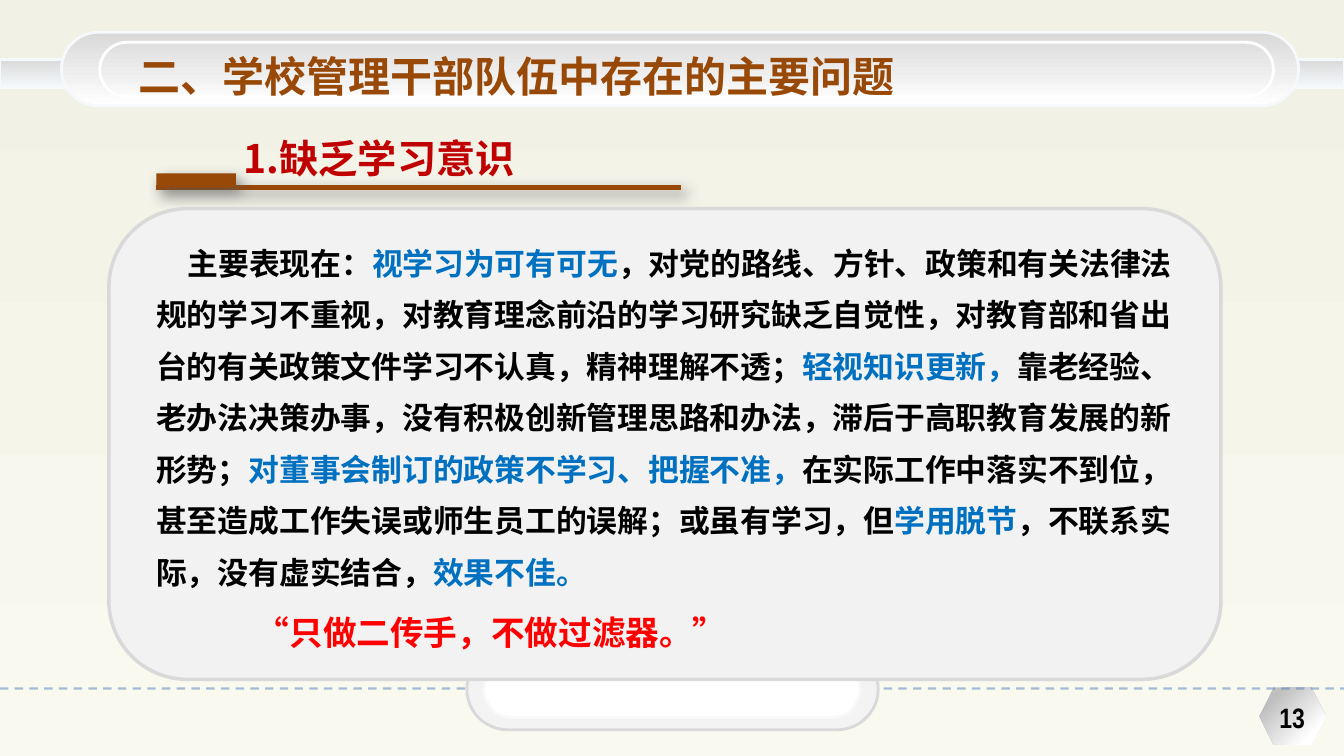
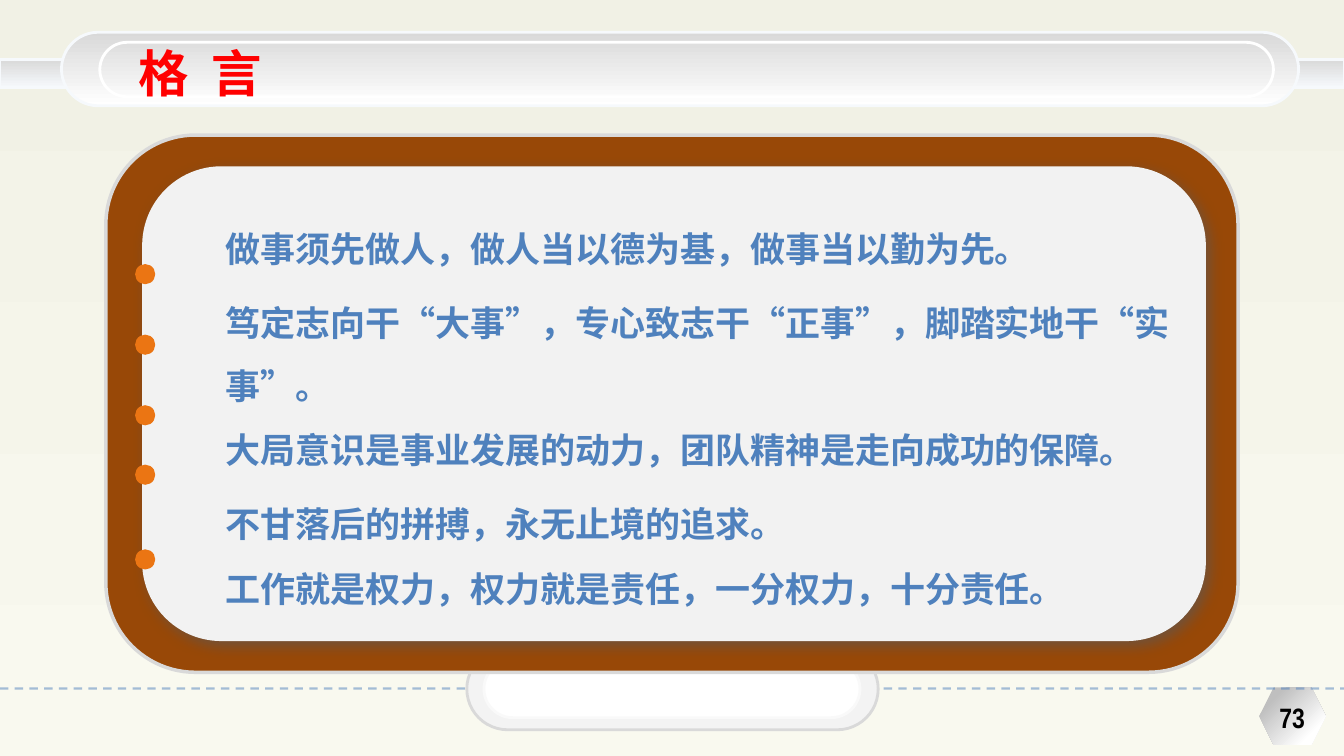
from dataclasses import dataclass

from lxml.etree import SubElement
from pptx import Presentation
from pptx.dml.color import RGBColor
from pptx.enum.dml import MSO_LINE
from pptx.enum.shapes import MSO_CONNECTOR, MSO_SHAPE
from pptx.enum.text import MSO_ANCHOR, MSO_AUTO_SIZE, PP_ALIGN
from pptx.oxml.ns import qn
from pptx.slide import Slide
from pptx.util import Inches, Pt

SANS = "Noto Sans CJK SC"
NARROW = "Arial Narrow"
BROWN, BLUE, BLACK, RED = "984807", "4F81BD", "000000", "FF0000"
SKY, PAPER, EDGE, PALE = "0070C0", "F2F2F2", "D9D9D9", "F6F9FC"
ROUND, RECT = MSO_SHAPE.ROUNDED_RECTANGLE, MSO_SHAPE.RECTANGLE


@dataclass(frozen=True)
class Blend:
    """A gradient of two colours, its angle counted anticlockwise."""
    start: str
    end: str
    angle: int = 270
    low: float = 0
    high: float = 1


@dataclass(frozen=True)
class Panel:
    """A preset shape with its place and look."""
    kind: MSO_SHAPE
    box: tuple[float, float, float, float]
    fill: str | Blend | None = None
    line: str | None = None
    width: float = 2
    bend: float | None = None
    shadow: bool = False


@dataclass(frozen=True)
class Style:
    """The look of a run of text."""
    size: float
    color: str
    face: str = SANS
    track: int = 0


@dataclass(frozen=True)
class Maxim:
    """A saying with its line pitch and the gap above, in points."""
    text: str
    pitch: float = 45
    gap: float = 7.5


FRAME = (
    Panel(MSO_SHAPE.HEXAGON, (12.49, 6.82, 0.66, 0.57),
          Blend("BFBFBF", "FFFFFF", 315, 0.2, 0.8)),
    Panel(RECT, (0, 0.59, 13.33, 0.28), Blend(EDGE, PALE), PALE),
    Panel(ROUND, (0.61, 0.32, 12.27, 0.73), Blend(EDGE, "FFFFFF"), PALE, bend=0.5),
    Panel(ROUND, (0.99, 0.42, 11.64, 0.54), None, "FFFFFF", bend=0.5),
)
TAB = (
    Panel(ROUND, (4.63, 6.43, 4.08, 0.81), "F3F3F3", EDGE, bend=0.5),
    Panel(ROUND, (4.8, 6.55, 3.73, 0.57), "FFFFFF", "F9F9F9", bend=0.5),
)
POINTS = (
    ("主要表现在：", BLACK),
    ("视学习为可有可无", SKY),
    ("，对党的路线、方针、政策和有关法律法规的学习不重视，对教育理念前沿的学习研究缺乏自觉性，"
     "对教育部和省出台的有关政策文件学习不认真，精神理解不透；", BLACK),
    ("轻视知识更新，", SKY),
    ("靠老经验、老办法决策办事，没有积极创新管理思路和办法，滞后于高职教育发展的新形势；", BLACK),
    ("对董事会制订的政策不学习、把握不准，", SKY),
    ("在实际工作中落实不到位，甚至造成工作失误或师生员工的误解；或虽有学习，但", BLACK),
    ("学用脱节", SKY),
    ("，不联系实际，没有虚实结合，", BLACK),
    ("效果不佳。", SKY),
)
MAXIMS = (
    Maxim("做事须先做人，做人当以德为基，做事当以勤为先。", gap=0),
    Maxim("笃定志向干“大事”，专心致志干“正事”，脚踏实地干“实事”。"),
    Maxim("大局意识是事业发展的动力，团队精神是走向成功的保障。", 28.2, 18),
    Maxim("不甘落后的拼搏，永无止境的追求。"),
    Maxim("工作就是权力，权力就是责任，一分权力，十分责任。", 28.2, 18),
)
DOTS = (2.62, 3.32, 4.02, 4.61, 5.45)


def shade(item, cast: bool) -> None:
    """Cast a soft shadow, or clear the one that comes by default."""
    props = item.element.spPr
    effects = props.find(qn("a:effectLst"))
    if effects is None:
        effects = SubElement(props, qn("a:effectLst"))
    if cast:
        outer = SubElement(effects, qn("a:outerShdw"), blurRad=str(Pt(10)),
                           dist=str(Pt(5)), dir="2700000", algn="tl", rotWithShape="0")
        color = SubElement(outer, qn("a:srgbClr"), val="595959")
        SubElement(color, qn("a:alpha"), val="64000")


def paint(fill, look: str | Blend | None) -> None:
    """Give a fill one colour, a gradient or nothing."""
    if look is None:
        fill.background()
    elif isinstance(look, str):
        fill.solid()
        fill.fore_color.rgb = RGBColor.from_string(look)
    else:
        fill.gradient()
        fill.gradient_angle = look.angle
        tones = ((look.start, look.low), (look.end, look.high))
        for stop, (color, place) in zip(fill.gradient_stops, tones):
            stop.color.rgb = RGBColor.from_string(color)
            stop.position = place


def draw(slide: Slide, panel: Panel) -> None:
    """Draw a panel on the slide."""
    shape = slide.shapes.add_shape(panel.kind, *map(Inches, panel.box))
    if panel.bend is not None:
        shape.adjustments[0] = panel.bend
    paint(shape.fill, panel.fill)
    paint(shape.line.fill, panel.line)
    if panel.line:
        shape.line.width = Pt(panel.width)
    shape.shadow.inherit = False
    shade(shape, panel.shadow)


def rule(slide: Slide, left: float, right: float, top: float,
         color: str, width: float):
    """Draw a level line and return it."""
    line = slide.shapes.add_connector(
        MSO_CONNECTOR.STRAIGHT, *map(Inches, (left, top, right, top)))
    paint(line.line.fill, color)
    line.line.width = Pt(width)
    return line


def dress(run, style: Style) -> None:
    """Format a run in both its Latin and Chinese faces."""
    font = run.font
    font.size, font.bold, font.name = Pt(style.size), True, style.face
    font.color.rgb = RGBColor.from_string(style.color)
    props = run._r.get_or_add_rPr()
    props.set("lang", "zh-CN")
    if style.track:
        props.set("spc", str(style.track))
    SubElement(props, qn("a:ea"), typeface=style.face)


def fit(shape, box: tuple[float, float, float, float], anchor: MSO_ANCHOR) -> None:
    """Place a text shape and set up its frame."""
    shape.left, shape.top, shape.width, shape.height = map(Inches, box)
    frame = shape.text_frame
    frame.auto_size, frame.word_wrap = MSO_AUTO_SIZE.NONE, True
    frame.vertical_anchor = anchor


def label(slide: Slide, box: tuple[float, float, float, float],
          text: str, style: Style) -> None:
    """Add one line of free text."""
    area = slide.shapes.add_textbox(0, 0, 0, 0)
    fit(area, box, MSO_ANCHOR.MIDDLE)
    area.text_frame.text = text
    dress(area.text_frame.paragraphs[0].runs[0], style)


def front(shape) -> None:
    """Bring a shape to the front."""
    shape.element.getparent().append(shape.element)


def start(deck, title: str, top: float, style: Style, number: str) -> Slide:
    """Add a slide with the shared frame, title and page number."""
    slide = deck.slides.add_slide(deck.slide_layouts[1])
    paint(slide.background.fill, Blend("F1F1E5", "F9F9EF"))
    draw(slide, FRAME[0])
    label(slide, (12.59, 6.9, 0.59, 0.44), number, Style(20, BLACK, NARROW))
    for panel in FRAME[1:]:
        draw(slide, panel)
    dash = rule(slide, 0, 13.33, 6.83, BLUE, 1.5)
    dash.line.dash_style = MSO_LINE.DASH
    for color in dash.element.spPr.iter(qn("a:srgbClr")):
        SubElement(color, qn("a:alpha"), val="50000")
    shade(dash, False)
    for panel in TAB:
        draw(slide, panel)
    head = slide.shapes.title
    fit(head, (1.15, top, 10.52, 0.71), MSO_ANCHOR.MIDDLE)
    head.text_frame.margin_left = Inches(0.22)
    head.text_frame.text = title
    para = head.text_frame.paragraphs[0]
    para.alignment = PP_ALIGN.LEFT
    dress(para.runs[0], style)
    front(head)
    return slide


def plain(para, pitch: float, gap: float, indent: float = 0) -> None:
    """Clear the bullet of a paragraph and set its spacing."""
    props = para._p.get_or_add_pPr()
    props.set("marL", "0")
    props.set("indent", str(Inches(indent)))
    SubElement(props, qn("a:buNone"))
    para.alignment = PP_ALIGN.LEFT
    para.line_spacing, para.space_before = Pt(pitch), Pt(gap)


def issue(deck) -> None:
    """Build the slide on the lack of study."""
    slide = start(deck, "二、学校管理干部队伍中存在的主要问题", 0.4, Style(30, BROWN), "13")
    shade(rule(slide, 1.55, 6.75, 1.86, BROWN, 4), True)
    draw(slide, Panel(RECT, (1.55, 1.72, 0.79, 0.14), BROWN, shadow=True))
    label(slide, (2.32, 1.28, 4.02, 0.57), "1.缺乏学习意识", Style(28, "C00000"))
    draw(slide, Panel(ROUND, (1.08, 2.07, 11.03, 4.67), PAPER, EDGE, 2.5))
    body = slide.placeholders[1]
    fit(body, (1.45, 2.23, 10.42, 3.79), MSO_ANCHOR.TOP)
    para = body.text_frame.paragraphs[0]
    plain(para, 36.8, 0, 0.31)
    for text, color in POINTS:
        run = para.add_run()
        run.text = text
        dress(run, Style(22, color))
    front(body)
    label(slide, (2.44, 6.02, 4.89, 0.5), "“只做二传手，不做过滤器。”", Style(24, RED))


def mottos(deck) -> None:
    """Build the slide of maxims."""
    slide = start(deck, "格 言", 0.36, Style(36, RED, track=400), "73")
    draw(slide, Panel(ROUND, (1.05, 1.34, 11.23, 5.33), BROWN, EDGE, 2.5))
    draw(slide, Panel(ROUND, (1.41, 1.65, 10.55, 4.71), PAPER, shadow=True))
    body = slide.placeholders[1]
    fit(body, (2.14, 2, 9.7, 4.2), MSO_ANCHOR.TOP)
    frame = body.text_frame
    frame.text = "\n".join(maxim.text for maxim in MAXIMS)
    for para, maxim in zip(frame.paragraphs, MAXIMS):
        plain(para, maxim.pitch, maxim.gap)
        dress(para.runs[0], Style(25, BLUE))
    front(body)
    for top in DOTS:
        draw(slide, Panel(MSO_SHAPE.OVAL, (1.34, top, 0.2, 0.2), "EB7513"))


def main() -> None:
    """Build and save the deck."""
    deck = Presentation()
    deck.slide_width, deck.slide_height = Inches(13.33), Inches(7.5)
    issue(deck)
    mottos(deck)
    deck.save("out.pptx")


if __name__ == "__main__":
    main()
